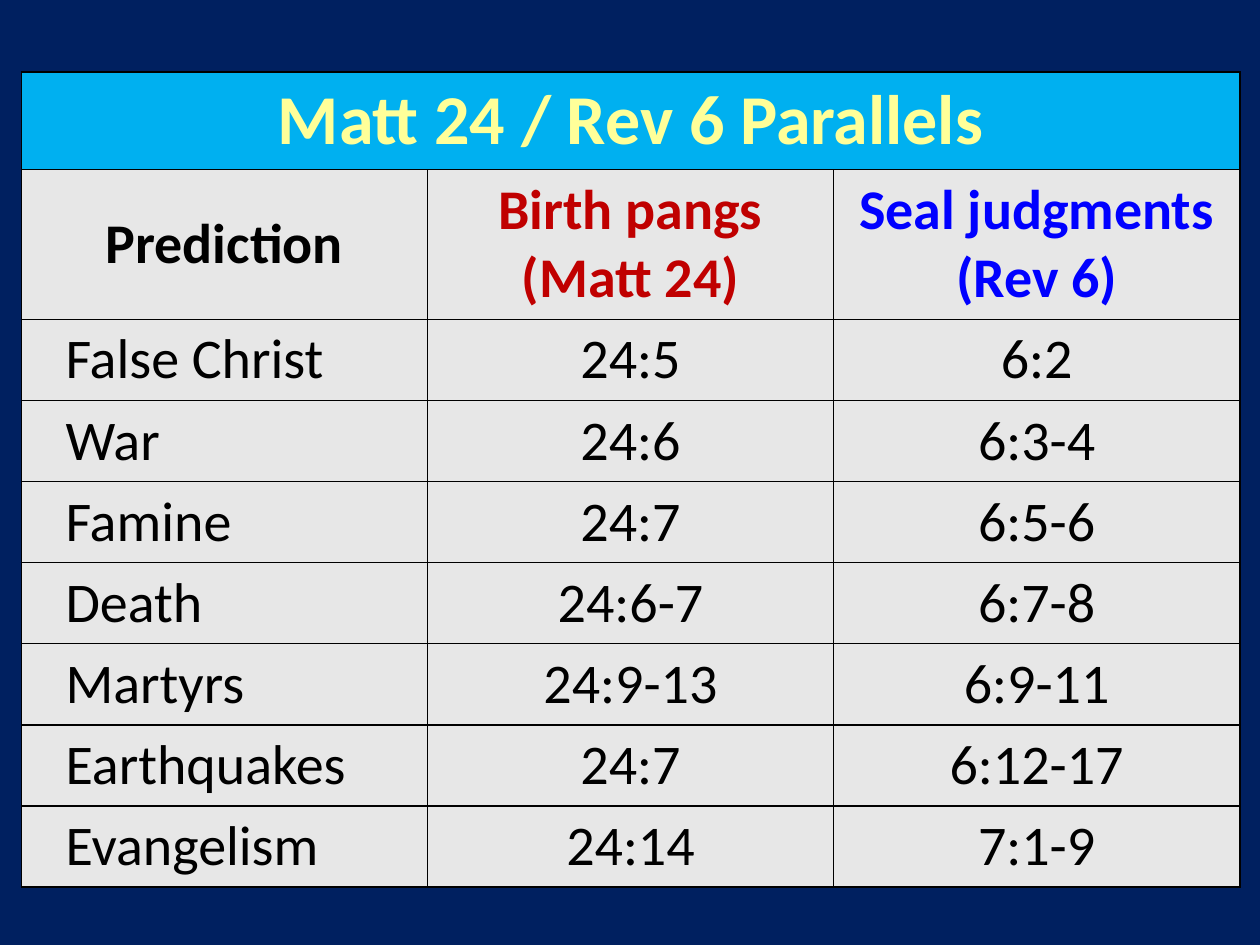
from dataclasses import dataclass

from lxml import etree
from pptx import Presentation
from pptx.dml.color import RGBColor
from pptx.enum.text import MSO_ANCHOR, PP_ALIGN
from pptx.oxml.ns import qn
from pptx.table import Table, _Cell
from pptx.util import Inches, Pt

CENTER, LEFT = PP_ALIGN.CENTER, PP_ALIGN.LEFT
MIDDLE = MSO_ANCHOR.MIDDLE
BLANK_LAYOUT = 6


@dataclass(frozen=True)
class Theme:
    font: str = "Calibri"
    title_size: int = 40
    body_size: int = 32
    background: str = "002060"
    banner: str = "00B0F0"
    panel: str = "E7E7E7"
    title: str = "FFFF99"
    text: str = "000000"
    matthew: str = "C00000"
    revelation: str = "0000FF"
    border: str = "000000"
    border_width: int = 1
    space_before: int = 20


@dataclass(frozen=True)
class CellStyle:
    color: str
    fill: str
    size: int
    bold: bool = False
    align: PP_ALIGN = CENTER
    indent: float = 0


@dataclass(frozen=True)
class Parallel:
    prediction: str
    matthew: str
    revelation: str


THEME = Theme()
TITLE = CellStyle(THEME.title, THEME.banner, THEME.title_size, bold=True)
HEADINGS = [
    ("Prediction", THEME.text),
    ("Birth pangs (Matt 24)", THEME.matthew),
    ("Seal judgments (Rev 6)", THEME.revelation),
]
LABEL = CellStyle(THEME.text, THEME.panel, THEME.body_size, align=LEFT, indent=0.25)
VERSE = CellStyle(THEME.text, THEME.panel, THEME.body_size)
PARALLELS = [
    Parallel("False Christ", "24:5", "6:2"),
    Parallel("War", "24:6", "6:3-4"),
    Parallel("Famine", "24:7", "6:5-6"),
    Parallel("Death", "24:6-7", "6:7-8"),
    Parallel("Martyrs", "24:9-13", "6:9-11"),
    Parallel("Earthquakes", "24:7", "6:12-17"),
    Parallel("Evangelism", "24:14", "7:1-9"),
]
ROW_HEIGHTS = [0.75, 1.13] + [0.63] * len(PARALLELS)
TABLE_LEFT, TABLE_TOP, TABLE_WIDTH = 0.17, 0.57, 9.67


def add_borders(cell: _Cell) -> None:
    properties = cell._tc.get_or_add_tcPr()
    for side in ("lnL", "lnR", "lnT", "lnB"):
        line = etree.SubElement(
            properties, qn(f"a:{side}"), w=str(Pt(THEME.border_width))
        )
        fill = etree.SubElement(line, qn("a:solidFill"))
        etree.SubElement(fill, qn("a:srgbClr"), val=THEME.border)


def write_cell(cell: _Cell, text: str, style: CellStyle) -> None:
    cell.fill.solid()
    cell.fill.fore_color.rgb = RGBColor.from_string(style.fill)
    cell.vertical_anchor = MIDDLE
    para = cell.text_frame.paragraphs[0]
    para.alignment = style.align
    properties = para._p.get_or_add_pPr()
    properties.set("marL", str(Inches(style.indent)))
    properties.set("indent", "0")
    spacing = etree.SubElement(properties, qn("a:spcBef"))
    etree.SubElement(spacing, qn("a:spcPct"), val=str(THEME.space_before * 1000))
    span = para.add_run()
    span.text = text
    formats = {"name": THEME.font, "size": Pt(style.size), "bold": style.bold}
    for name, value in formats.items():
        setattr(span.font, name, value)
    span.font.color.rgb = RGBColor.from_string(style.color)


def fill_table(table: Table) -> None:
    for cell in table.iter_cells():
        add_borders(cell)
    table.cell(0, 0).merge(table.cell(0, len(HEADINGS) - 1))
    write_cell(table.cell(0, 0), "Matt 24 / Rev 6 Parallels", TITLE)
    for column, (text, color) in enumerate(HEADINGS):
        style = CellStyle(color, THEME.panel, THEME.body_size, bold=True)
        write_cell(table.cell(1, column), text, style)
    for row, parallel in enumerate(PARALLELS, start=2):
        write_cell(table.cell(row, 0), parallel.prediction, LABEL)
        write_cell(table.cell(row, 1), parallel.matthew, VERSE)
        write_cell(table.cell(row, 2), parallel.revelation, VERSE)


def main() -> None:
    deck = Presentation()
    deck.slide_width, deck.slide_height = Inches(10), Inches(7.5)
    page = deck.slides.add_slide(deck.slide_layouts[BLANK_LAYOUT])
    page.background.fill.solid()
    page.background.fill.fore_color.rgb = RGBColor.from_string(THEME.background)
    table = page.shapes.add_table(
        len(ROW_HEIGHTS),
        len(HEADINGS),
        Inches(TABLE_LEFT),
        Inches(TABLE_TOP),
        Inches(TABLE_WIDTH),
        Inches(sum(ROW_HEIGHTS)),
    ).table
    for row, height in zip(table.rows, ROW_HEIGHTS):
        row.height = Inches(height)
    fill_table(table)
    deck.save("out.pptx")


if __name__ == "__main__":
    main()
